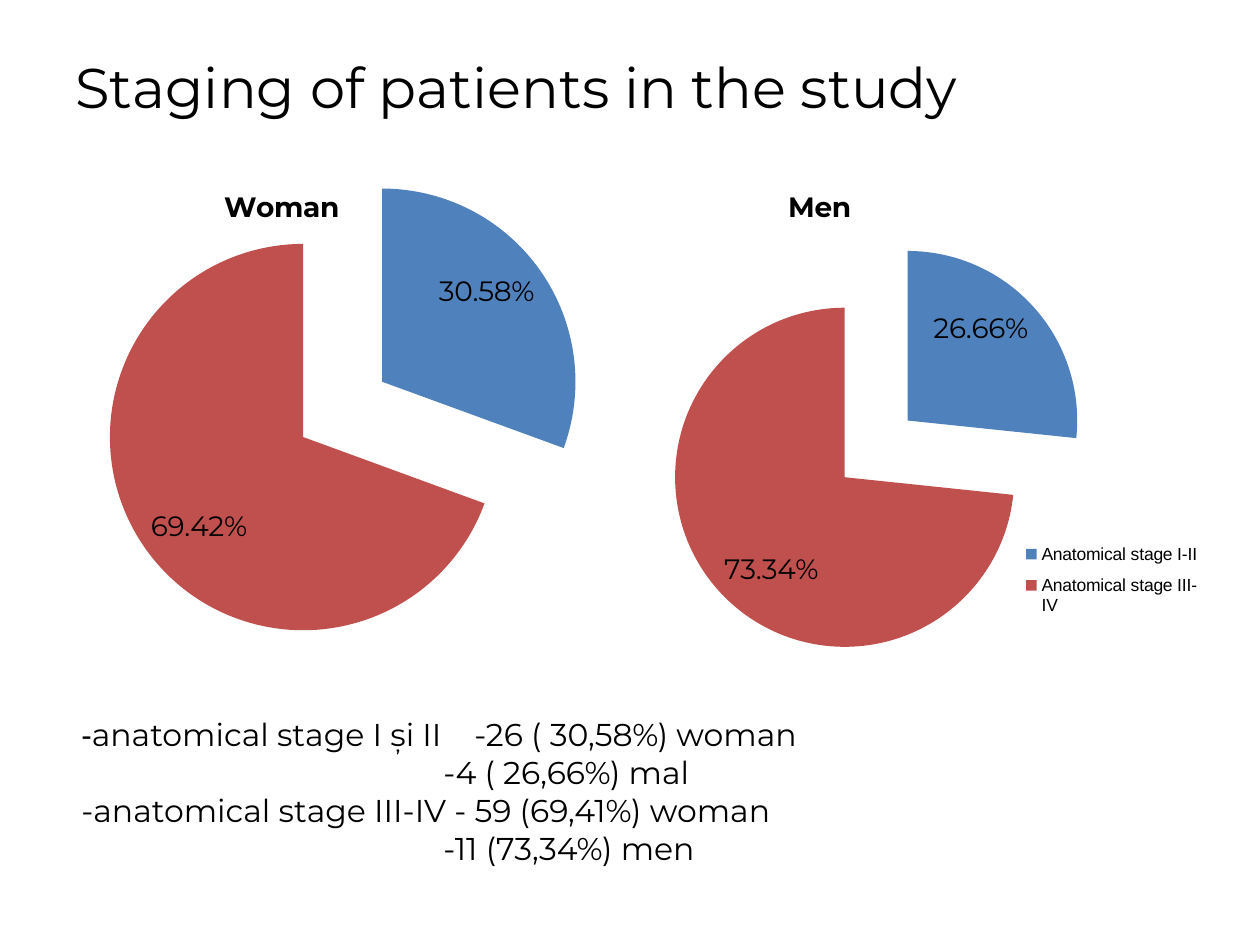
from dataclasses import dataclass
from typing import Optional

from lxml.etree import SubElement
from pptx import Presentation
from pptx.chart.data import CategoryChartData
from pptx.dml.color import RGBColor
from pptx.enum.chart import XL_CHART_TYPE, XL_LABEL_POSITION, XL_LEGEND_POSITION
from pptx.enum.text import MSO_ANCHOR
from pptx.oxml.ns import qn
from pptx.util import Emu, Pt

BLACK = RGBColor(0x00, 0x00, 0x00)
STAGE_COLORS = (RGBColor(0x4F, 0x81, 0xBD), RGBColor(0xC0, 0x50, 0x4D))
STAGES = ("Anatomical stage I-II", "Anatomical stage III-IV")
MAIN_FONT = "Montserrat"
EXPLOSION = 25


def px(length: int) -> Emu:
    return Emu(round(length * 914400 / 126))


@dataclass
class StagePie:
    title: str
    categories: tuple
    shares: tuple
    box: tuple
    title_at: tuple
    plot_area: tuple
    legend_area: Optional[tuple] = None


@dataclass
class Finding:
    text: str
    tab: Optional[int] = None


PIES = (
    StagePie("Woman", ("1", "2"), (0.3058, 0.6942), (63, 168, 538, 483),
             (0.29, 0.03), (0.07, 0, 0.9, 1)),
    StagePie("Men", STAGES, (0.2666, 0.7334), (591, 168, 620, 493),
             (0.31, 0.03), (0.1, 0.14, 0.72, 0.86), (0.69, 0.74, 0.3, 0.19)),
)
FINDINGS = (
    Finding("-anatomical stage I și II\t-26 ( 30,58%) woman", 393),
    Finding("\t-4 ( 26,66%) mal", 362),
    Finding("-anatomical stage III-IV - 59 (69,41%) woman"),
    Finding("\t-11 (73,34%) men", 362),
)


def style(font, size: int, name: str = MAIN_FONT, bold: bool = False) -> None:
    font.size, font.name, font.bold = Pt(size), name, bold
    font.color.rgb = BLACK


def add_text_frame(slide, box: tuple):
    frame = slide.shapes.add_textbox(*map(px, box)).text_frame
    frame.word_wrap = True
    frame.vertical_anchor = MSO_ANCHOR.TOP
    return frame


def set_layout(part, area: tuple, inner: bool = False) -> None:
    """Place a chart part by fractions of the chart: x, y and maybe w, h."""
    layout = part.find(qn("c:layout"))
    if layout is None:
        layout = SubElement(part, qn("c:layout"))
        overlay = part.find(qn("c:overlay"))
        if overlay is None:
            part.insert(0, layout)
        else:
            overlay.addprevious(layout)
    manual = SubElement(layout, qn("c:manualLayout"))
    if inner:
        SubElement(manual, qn("c:layoutTarget")).set("val", "inner")
    for mode in ("xMode", "yMode"):
        SubElement(manual, qn(f"c:{mode}")).set("val", "edge")
    for side, fraction in zip("xywh", area):
        SubElement(manual, qn(f"c:{side}")).set("val", str(fraction))


def add_pie(slide, pie: StagePie) -> None:
    data = CategoryChartData(number_format="0.00%")
    data.categories = pie.categories
    data.add_series("Series 1", pie.shares)
    chart = slide.shapes.add_chart(
        XL_CHART_TYPE.PIE, *map(px, pie.box), data).chart
    style(chart.font, 10, "Arial")

    # Heading
    chart.has_title = True
    heading = chart.chart_title.text_frame
    heading.text = pie.title
    style(heading.paragraphs[0].font, 16, bold=True)
    set_layout(chart.chart_title._element, pie.title_at)

    # Slices
    plot = chart.plots[0]
    plot.vary_by_categories = True
    series = plot.series[0]
    for index, color in enumerate(STAGE_COLORS):
        fill = series.points[index].format.fill
        fill.solid()
        fill.fore_color.rgb = color
    explosion = SubElement(series._element, qn("c:explosion"))
    explosion.set("val", str(EXPLOSION))
    series._element.find(qn("c:dPt")).addprevious(explosion)
    set_layout(chart._chartSpace.chart.plotArea, pie.plot_area, inner=True)

    # Share labels
    plot.has_data_labels = True
    labels = plot.data_labels
    labels.show_value, labels.show_percentage = True, False
    labels.number_format, labels.number_format_is_linked = "0.00%", False
    labels.position = XL_LABEL_POSITION.INSIDE_END
    style(labels.font, 16)

    # Legend
    chart.has_legend = pie.legend_area is not None
    if pie.legend_area:
        chart.legend.position = XL_LEGEND_POSITION.RIGHT
        chart.legend.include_in_layout = False
        style(chart.legend.font, 10, "Arial")
        set_layout(chart.legend._element, pie.legend_area)


def add_findings(slide) -> None:
    frame = add_text_frame(slide, (69, 709, 1082, 165))
    for index, finding in enumerate(FINDINGS):
        paragraph = frame.paragraphs[0] if index == 0 else frame.add_paragraph()
        paragraph.text = finding.text
        if finding.tab:
            tabs = SubElement(paragraph._p.get_or_add_pPr(), qn("a:tabLst"))
            tab = SubElement(tabs, qn("a:tab"))
            tab.set("pos", str(px(finding.tab)))
            tab.set("algn", "l")
        style(paragraph.font, 18)
    # The opening dash keeps the plain face
    first = frame.paragraphs[0]
    dash, rest = first.runs[0], first.add_run()
    rest.text = dash.text[1:]
    dash.text = "-"
    dash.font.name = "Arial"
    dash._r.addnext(rest._r)


def main() -> None:
    presentation = Presentation()
    presentation.slide_width, presentation.slide_height = px(1260), px(945)
    slide = presentation.slides.add_slide(presentation.slide_layouts[6])

    # Title
    title = add_text_frame(slide, (63, 38, 1134, 157))
    title.margin_top = px(15)
    title.text = "Staging of patients in the study"
    style(title.paragraphs[0].font, 32)

    for pie in PIES:
        add_pie(slide, pie)
    add_findings(slide)
    presentation.save("out.pptx")


if __name__ == "__main__":
    main()
